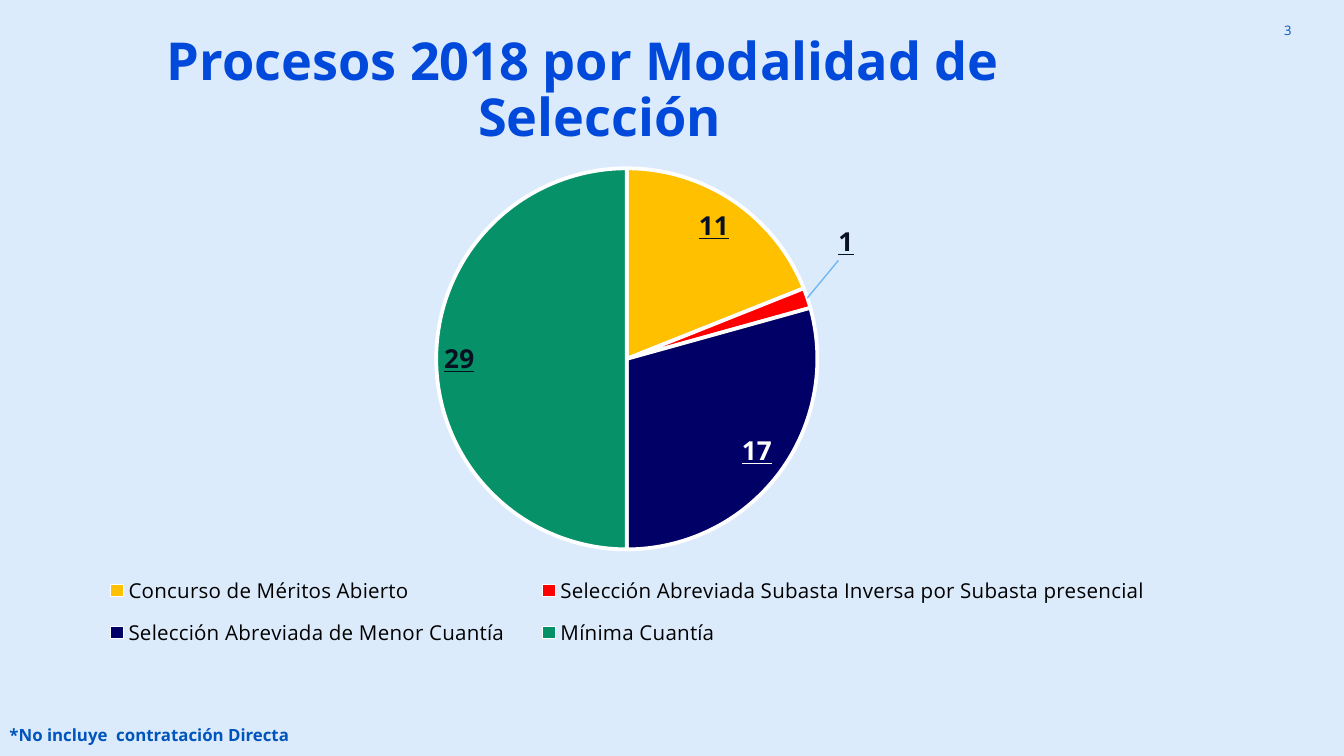
from lxml.etree import SubElement
from pptx import Presentation
from pptx.chart.data import CategoryChartData
from pptx.dml.color import RGBColor
from pptx.enum.chart import XL_CHART_TYPE, XL_LABEL_POSITION, XL_LEGEND_POSITION
from pptx.enum.text import MSO_ANCHOR, PP_ALIGN
from pptx.oxml import parse_xml
from pptx.oxml.ns import nsdecls, qn
from pptx.util import Cm, Pt

SKY = RGBColor(0xDC, 0xEB, 0xFB)
BLUE = RGBColor(0x00, 0x49, 0xDB)
DEEP = RGBColor(0x00, 0x54, 0xBC)
INK = RGBColor(0x08, 0x11, 0x22)
STEEL = RGBColor(0x07, 0x37, 0x63)
BLACK = RGBColor(0x00, 0x00, 0x00)
WHITE = RGBColor(0xFF, 0xFF, 0xFF)
GOLD = RGBColor(0xFF, 0xC0, 0x00)
RED = RGBColor(0xFF, 0x00, 0x00)
NAVY = RGBColor(0x00, 0x00, 0x66)
GREEN = RGBColor(0x06, 0x91, 0x69)
LEAD = RGBColor(0x6F, 0xB7, 0xF7)

FACE = "Open Sans"
SLICES = [
    ("Concurso de Méritos Abierto", 11, GOLD),
    ("Selección Abreviada Subasta Inversa por Subasta presencial", 1, RED),
    ("Selección Abreviada de Menor Cuantía", 17, NAVY),
    ("Mínima Cuantía", 29, GREEN),
]


def set_font(font, size, color, bold=False, name=FACE):
    font.name = name
    font.size = Pt(size)
    font.bold = bold
    font.color.rgb = color


def add_text(slide, box, text, size, color, bold, align, anchor, pad=(0.18, 0.1)):
    frame = slide.shapes.add_textbox(*map(Cm, box)).text_frame
    frame.word_wrap = True
    frame.vertical_anchor = anchor
    frame.margin_left = frame.margin_right = Cm(pad[0])
    frame.margin_top = frame.margin_bottom = Cm(pad[1])
    para = frame.paragraphs[0]
    para.alignment = align
    run = para.add_run()
    run.text = text
    set_font(run.font, size, color, bold)
    return para


def make_layout(**parts):
    layout = parse_xml(f"<c:layout {nsdecls('c')}><c:manualLayout/></c:layout>")
    for tag, value in parts.items():
        SubElement(layout[0], qn(f"c:{tag}")).set("val", str(value))
    return layout


def place_plot(chart):
    area = chart._chartSpace.chart.plotArea
    for old in area.findall(qn("c:layout")):
        area.remove(old)
    area.insert(0, make_layout(layoutTarget="inner", xMode="edge", yMode="edge",
                               x=0, y=0.097, w=0.988, h=0.652))


def add_legend(chart):
    chart.has_legend = True
    legend = chart.legend
    legend.position = XL_LEGEND_POSITION.BOTTOM
    legend.include_in_layout = False
    set_font(legend.font, 11, BLACK)
    node = legend._element
    for old in node.findall(qn("c:layout")):
        node.remove(old)
    node.find(qn("c:legendPos")).addnext(
        make_layout(xMode="edge", yMode="edge", x=0.03, y=0.77, w=0.93, h=0.17))


def style_label(label, color, spot):
    set_font(label.font, 14, color, True)
    label.font.underline = True
    label.position = spot


def add_labels(series):
    labels = series.data_labels
    labels.show_value = True
    style_label(labels, INK, XL_LABEL_POSITION.INSIDE_END)
    style_label(series.points[2].data_label, WHITE, XL_LABEL_POSITION.INSIDE_END)
    style_label(series.points[1].data_label, INK, XL_LABEL_POSITION.OUTSIDE_END)
    root = labels._element
    small = root.find(qn("c:dLbl"))
    small.find(qn("c:idx")).addnext(make_layout(x=0.02, y=-0.06))
    for old in root.findall(qn("c:showLeaderLines")):
        root.remove(old)
    SubElement(root, qn("c:showLeaderLines")).set("val", "1")
    root.append(parse_xml(
        f"<c:leaderLines {nsdecls('c', 'a')}><c:spPr><a:ln w='9525'><a:solidFill>"
        f"<a:srgbClr val='{LEAD}'/></a:solidFill></a:ln></c:spPr></c:leaderLines>"))


def add_pie(slide, box):
    names, values, colors = zip(*SLICES)
    data = CategoryChartData()
    data.categories = names
    data.add_series("Series 1", values)
    chart = slide.shapes.add_chart(XL_CHART_TYPE.PIE, *map(Cm, box), data).chart
    chart.has_title = False
    set_font(chart.font, 10, STEEL, name="Arial")
    plot = chart.plots[0]
    plot.vary_by_categories = True
    series = plot.series[0]
    for index, color in enumerate(colors):
        form = series.points[index].format
        form.fill.solid()
        form.fill.fore_color.rgb = color
        form.line.color.rgb = WHITE
        form.line.width = Pt(2)
    add_labels(series)
    add_legend(chart)
    place_plot(chart)


def main():
    deck = Presentation()
    deck.slide_width, deck.slide_height = Cm(25.4), Cm(14.29)
    slide = deck.slides.add_slide(deck.slide_layouts[6])
    slide.background.fill.solid()
    slide.background.fill.fore_color.rgb = SKY

    add_text(slide, (23.14, 0.03, 1.52, 1.09), "3", 7, DEEP, False,
             PP_ALIGN.RIGHT, MSO_ANCHOR.MIDDLE, (0.25, 0.25))
    title = add_text(slide, (0.51, 0.56, 20.37, 2.64),
                     "Procesos 2018 por Modalidad de Selección", 28, BLUE, True,
                     PP_ALIGN.CENTER, MSO_ANCHOR.TOP)
    title.line_spacing = 0.9
    title.space_before = Pt(8)
    props = title._p.get_or_add_pPr()
    props.set("marL", str(Cm(1.27)))
    props.set("indent", str(Cm(-0.64)))
    add_text(slide, (0, 13.16, 13.21, 1.12), "*No incluye  contratación Directa", 9,
             DEEP, True, PP_ALIGN.LEFT, MSO_ANCHOR.BOTTOM, (0.18, 0.2))
    add_pie(slide, (0.84, 2.11, 22.28, 11.05))
    deck.save("out.pptx")


if __name__ == "__main__":
    main()
